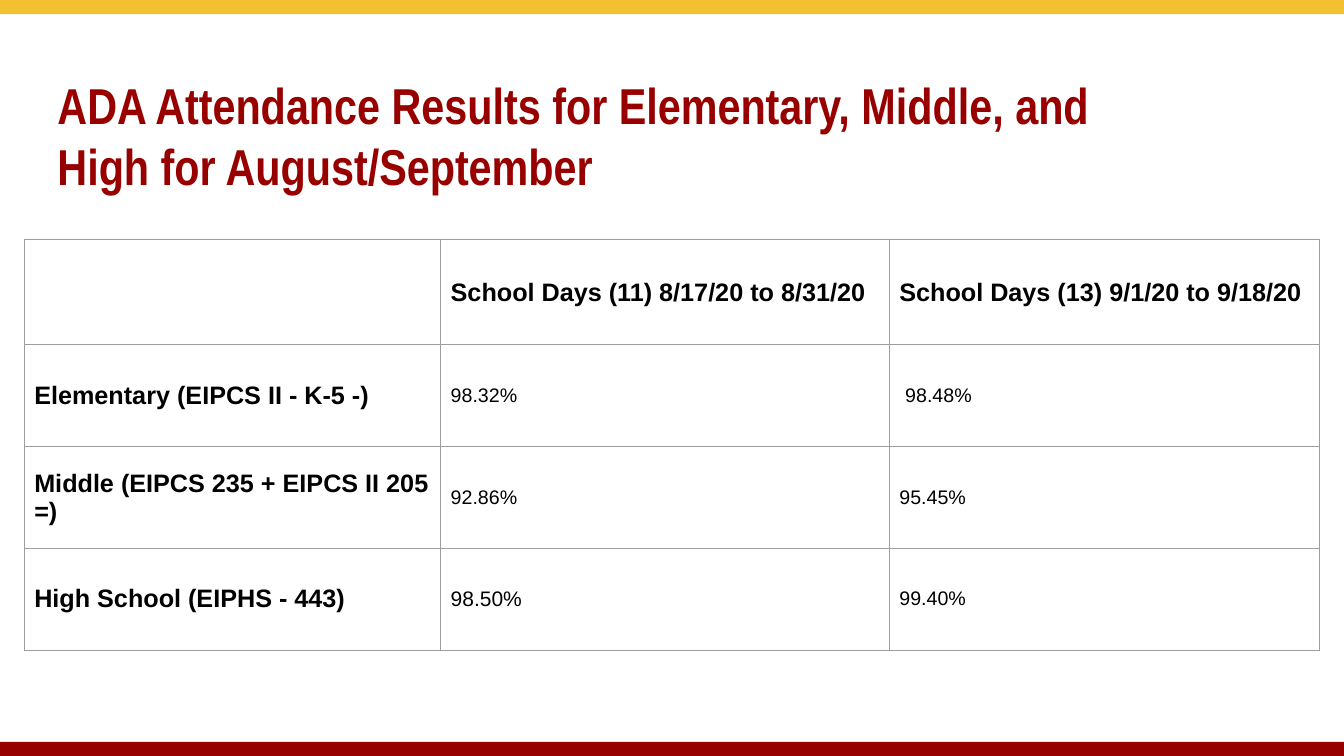
from lxml import etree
from pptx import Presentation
from pptx.dml.color import RGBColor
from pptx.enum.shapes import MSO_SHAPE
from pptx.enum.text import MSO_ANCHOR, MSO_AUTO_SIZE, PP_ALIGN
from pptx.oxml.ns import qn
from pptx.util import Inches, Pt

RECTANGLE = MSO_SHAPE.RECTANGLE
TOP, MIDDLE = MSO_ANCHOR.TOP, MSO_ANCHOR.MIDDLE
LEFT = PP_ALIGN.LEFT
NO_FIT = MSO_AUTO_SIZE.NONE

COLORS = {"gold": "F1C131", "red": "980000", "text": "000000",
          "border": "9E9E9E", "white": "FFFFFF"}

HEADING = "ADA Attendance Results for Elementary, Middle, and High for August/September"
ATTENDANCE = [
    [[], [("School Days (11) 8/17/20 to 8/31/20", 18)],
     [("School Days (13) 9/1/20 to 9/18/20", 18)]],
    [[("Elementary (EIPCS II - K-5 -)", 18)], [("98.32%", 14)],
     [(" ", 15), ("98.48%", 14)]],
    [[("Middle (EIPCS 235 + EIPCS II 205 =)", 18)], [("92.86%", 14)], [("95.45%", 14)]],
    [[("High School (EIPHS - 443)", 18)], [("98.50%", 15)], [("99.40%", 14)]],
]
COLUMN_WIDTHS = [4.13, 4.45, 4.27]
ROW_HEIGHTS = [1.04, 1.01, 1.01, 1.01]
SLIDE_WIDTH, SLIDE_HEIGHT, BAND_HEIGHT = 13.33, 7.5, 0.14


def color(name):
    return RGBColor.from_string(COLORS[name])


def add_run(paragraph, text, size, font, color_name, bold):
    run = paragraph.add_run()
    run.text = text
    run.font.name = font
    run.font.size = Pt(size)
    run.font.bold = bold
    run.font.color.rgb = color(color_name)


def add_band(slide, top, color_name):
    band = slide.shapes.add_shape(RECTANGLE, 0, Inches(top),
                                  Inches(SLIDE_WIDTH), Inches(BAND_HEIGHT))
    band.shadow.inherit = False
    band.fill.solid()
    band.fill.fore_color.rgb = color(color_name)
    band.line.fill.background()


def add_heading(slide):
    title = slide.shapes.title
    title.left, title.top = Inches(0.57), Inches(0.73)
    title.width, title.height = Inches(11.18), Inches(1.29)
    frame = title.text_frame
    frame.margin_left = frame.margin_right = frame.margin_bottom = 0
    frame.margin_top = Inches(0.01)
    frame.vertical_anchor = TOP
    frame.word_wrap = True
    frame.auto_size = NO_FIT
    paragraph = frame.paragraphs[0]
    paragraph.alignment = LEFT
    add_run(paragraph, HEADING, 36, "Arial Narrow", "red", True)


def add_borders(cell):
    properties = cell._tc.get_or_add_tcPr()
    for side in ("lnL", "lnR", "lnT", "lnB"):
        border = etree.SubElement(properties, qn(f"a:{side}"), w=str(Pt(0.75)))
        fill = etree.SubElement(border, qn("a:solidFill"))
        etree.SubElement(fill, qn("a:srgbClr"), val=COLORS["border"])


def add_attendance(slide):
    table = slide.shapes.add_table(
        len(ROW_HEIGHTS), len(COLUMN_WIDTHS), Inches(0.24), Inches(2.38),
        Inches(sum(COLUMN_WIDTHS)), Inches(sum(ROW_HEIGHTS))).table
    table.first_row = table.horz_banding = False
    for column, width in zip(table.columns, COLUMN_WIDTHS):
        column.width = Inches(width)
    for row, height in zip(table.rows, ROW_HEIGHTS):
        row.height = Inches(height)
    for row_index, row_content in enumerate(ATTENDANCE):
        for column_index, runs in enumerate(row_content):
            cell = table.cell(row_index, column_index)
            cell.margin_left = cell.margin_right = Inches(0.1)
            cell.margin_top = cell.margin_bottom = Inches(0.1)
            cell.vertical_anchor = MIDDLE
            add_borders(cell)
            cell.fill.solid()
            cell.fill.fore_color.rgb = color("white")
            is_label = row_index == 0 or column_index == 0
            for text, size in runs:
                add_run(cell.text_frame.paragraphs[0], text, size, "Arial", "text", is_label)


def main():
    presentation = Presentation()
    presentation.slide_width = Inches(SLIDE_WIDTH)
    presentation.slide_height = Inches(SLIDE_HEIGHT)
    slide = presentation.slides.add_slide(presentation.slide_layouts[5])
    add_band(slide, 0, "gold")
    add_band(slide, SLIDE_HEIGHT - BAND_HEIGHT, "red")
    add_heading(slide)
    add_attendance(slide)
    presentation.save("out.pptx")


if __name__ == "__main__":
    main()
